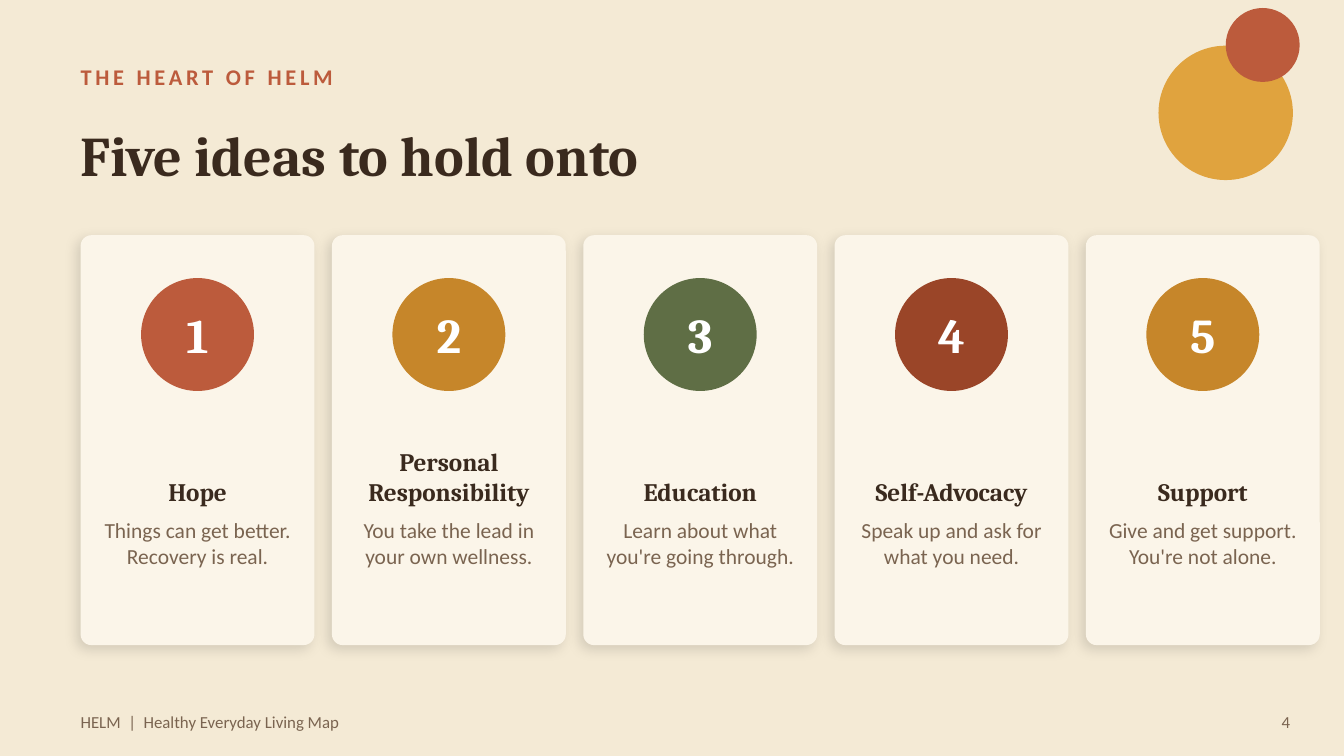
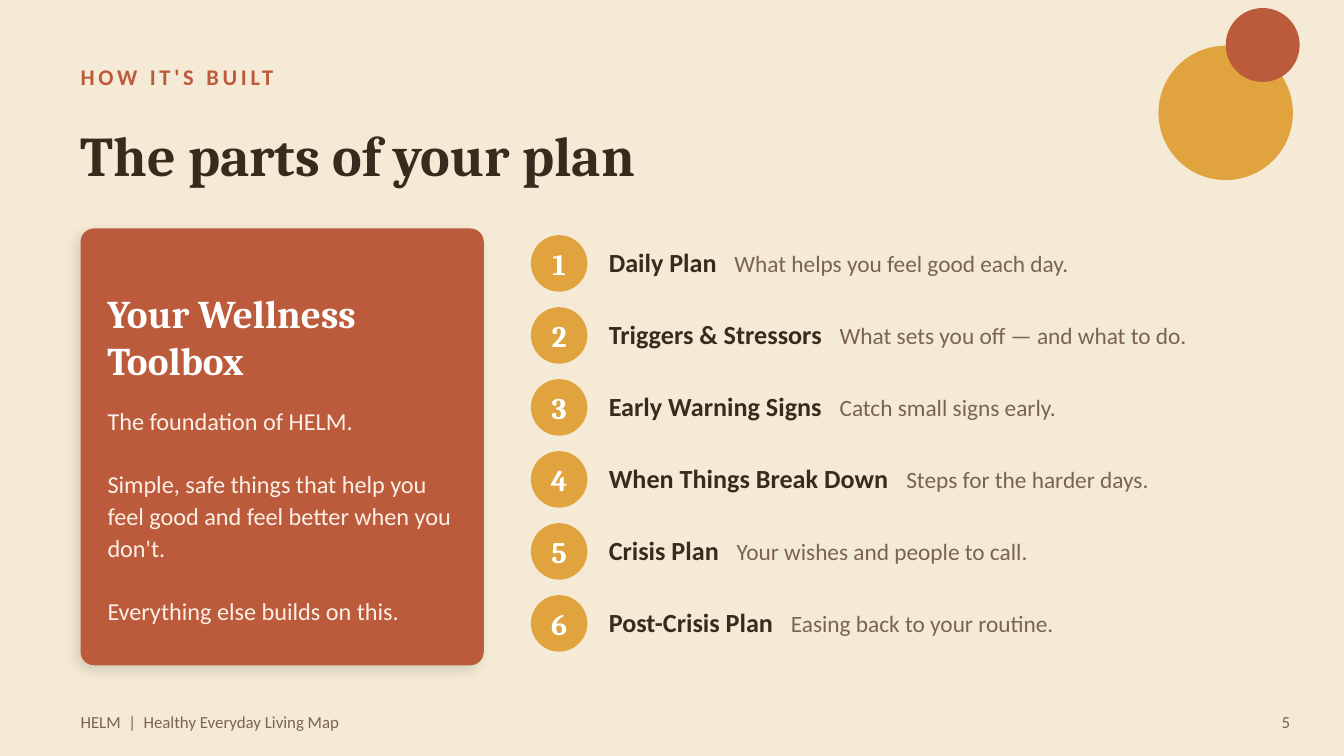
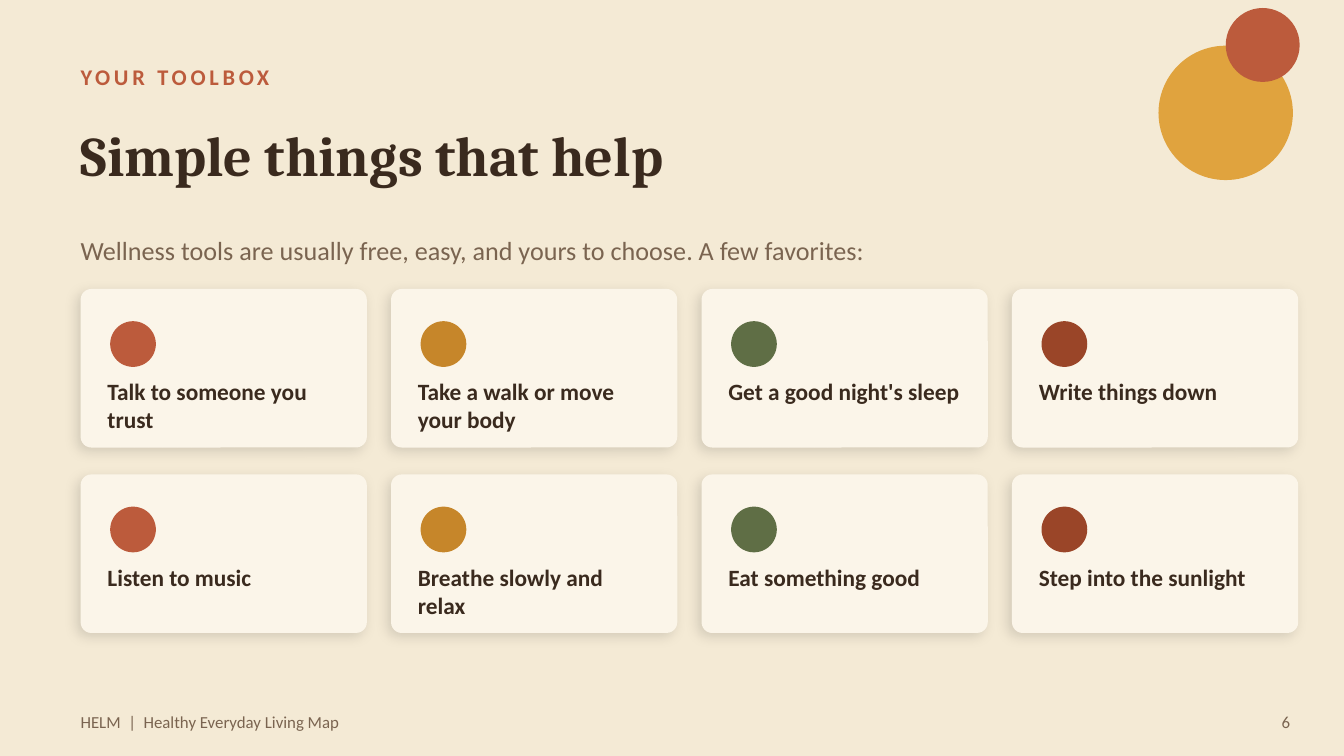
from dataclasses import dataclass
from typing import Any, NamedTuple, Optional

from lxml import etree
from pptx import Presentation
from pptx.dml.color import RGBColor
from pptx.enum.shapes import MSO_SHAPE
from pptx.enum.text import MSO_ANCHOR, PP_ALIGN
from pptx.oxml.ns import qn
from pptx.util import Pt

OVAL = MSO_SHAPE.OVAL
ROUNDED = MSO_SHAPE.ROUNDED_RECTANGLE
TOP, MIDDLE, BOTTOM = MSO_ANCHOR.TOP, MSO_ANCHOR.MIDDLE, MSO_ANCHOR.BOTTOM
LEFT, CENTER, RIGHT = PP_ALIGN.LEFT, PP_ALIGN.CENTER, PP_ALIGN.RIGHT

SAND = "F4EAD5"
CREAM = "FBF5E9"
RUST = "BC5B3C"
GOLD = "E0A33E"
AMBER = "C6862A"
OLIVE = "5F6E45"
BRICK = "9A4528"
INK = "3A2A1E"
TAUPE = "7A6450"
BLUSH = "FBEFE6"
WHITE = "FFFFFF"

SERIF = "Cambria"
SANS = "Calibri"
MARGIN = 43.2
CARD_RADIUS = 5.76
FOOTER = "HELM  |  Healthy Everyday Living Map"


class Box(NamedTuple):
    left: float
    top: float
    width: float
    height: float


@dataclass(frozen=True)
class Style:
    name: str
    size: float
    color: str
    bold: bool = False
    tracking: float = 0


class Span(NamedTuple):
    text: str
    style: Style


class Idea(NamedTuple):
    color: str
    heading: list[str]
    detail: str


class Part(NamedTuple):
    heading: str
    detail: str


EYEBROW = Style(SANS, 12, RUST, True, 2)
TITLE = Style(SERIF, 30, INK, True)
SMALL = Style(SANS, 9, TAUPE)
IDEA_NUMBER = Style(SERIF, 26, WHITE, True)
IDEA_HEADING = Style(SERIF, 13.5, INK, True)
IDEA_DETAIL = Style(SANS, 11.5, TAUPE)
PANEL_HEADING = Style(SERIF, 21, WHITE, True)
PANEL_BODY = Style(SANS, 13, BLUSH)
PART_NUMBER = Style(SERIF, 16, WHITE, True)
PART_HEADING = Style(SANS, 14, INK, True)
PART_GAP = Style(SANS, 14, INK, True, 6.3)
PART_DETAIL = Style(SANS, 12.5, TAUPE)
INTRO = Style(SANS, 14, TAUPE)
TOOL = Style(SANS, 12.5, INK, True)

IDEAS = [
    Idea(RUST, ["Hope"], "Things can get better. Recovery is real."),
    Idea(AMBER, ["Personal", "Responsibility"], "You take the lead in your own wellness."),
    Idea(OLIVE, ["Education"], "Learn about what you're going through."),
    Idea(BRICK, ["Self-Advocacy"], "Speak up and ask for what you need."),
    Idea(AMBER, ["Support"], "Give and get support. You're not alone."),
]
PANEL_LINES = [
    "The foundation of HELM.",
    "Simple, safe things that help you feel good and feel better when you don't.",
    "Everything else builds on this.",
]
PARTS = [
    Part("Daily Plan", "What helps you feel good each day."),
    Part("Triggers & Stressors", "What sets you off — and what to do."),
    Part("Early Warning Signs", "Catch small signs early."),
    Part("When Things Break Down", "Steps for the harder days."),
    Part("Crisis Plan", "Your wishes and people to call."),
    Part("Post-Crisis Plan", "Easing back to your routine."),
]
TOOLS = [
    "Talk to someone you trust",
    "Take a walk or move your body",
    "Get a good night's sleep",
    "Write things down",
    "Listen to music",
    "Breathe slowly and relax",
    "Eat something good",
    "Step into the sunlight",
]
TOOL_COLORS = [RUST, AMBER, OLIVE, BRICK]


def paint(fill: Any, color: str) -> None:
    fill.solid()
    fill.fore_color.rgb = RGBColor.from_string(color)


def place(box: Box) -> list[int]:
    return [Pt(length) for length in box]


def assign(target: Any, values: dict[str, Any]) -> None:
    for name, value in values.items():
        setattr(target, name, value)


def add_span(para: Any, span: Span) -> None:
    run = para.add_run()
    run.text = span.text
    style = span.style
    assign(run.font, {"name": style.name, "size": Pt(style.size), "bold": style.bold})
    run.font.color.rgb = RGBColor.from_string(style.color)
    if style.tracking:
        run.font._element.set("spc", str(round(style.tracking * 100)))


def write(shape: Any, lines: list[list[Span]], align: Any = LEFT, anchor: Any = MIDDLE,
          leading: Optional[float] = None, gap: float = 0) -> None:
    frame = shape.text_frame
    assign(frame, {"word_wrap": True, "vertical_anchor": anchor, "margin_left": 0,
                   "margin_top": 0, "margin_right": 0, "margin_bottom": 0})
    for index, spans in enumerate(lines):
        para = frame.add_paragraph() if index else frame.paragraphs[0]
        para.alignment = align
        if leading:
            para.line_spacing = Pt(leading)
        if index and gap:
            para.space_before = Pt(gap)
        for span in spans:
            add_span(para, span)


def add_text(page: Any, box: Box, texts: list[str], style: Style, **layout: Any) -> None:
    lines = [[Span(text, style)] for text in texts]
    write(page.shapes.add_textbox(*place(box)), lines, **layout)


def add_shape(page: Any, kind: Any, box: Box, color: str) -> Any:
    shape = page.shapes.add_shape(kind, *place(box))
    shape.shadow.inherit = False
    paint(shape.fill, color)
    shape.line.fill.background()
    return shape


def add_circle(page: Any, left: float, top: float, size: float, color: str) -> Any:
    return add_shape(page, OVAL, Box(left, top, size, size), color)


def add_card(page: Any, box: Box, color: str, radius: float) -> None:
    card = add_shape(page, ROUNDED, box, color)
    card.adjustments[0] = radius / min(box.width, box.height)
    effects = card._element.spPr.find(qn("a:effectLst"))
    shadow = etree.SubElement(effects, qn("a:outerShdw"), {
        "blurRad": str(Pt(7)), "dist": str(Pt(3)), "dir": str(135 * 60000),
        "algn": "bl", "rotWithShape": "0"})
    tint = etree.SubElement(shadow, qn("a:srgbClr"), {"val": "000000"})
    etree.SubElement(tint, qn("a:alpha"), {"val": "12000"})


def add_page(deck: Any, number: int, eyebrow: str, title: str) -> Any:
    page = deck.slides.add_slide(deck.slide_layouts[6])
    paint(page.background.fill, SAND)
    add_circle(page, 620.64, 24.5, 72, GOLD)
    add_circle(page, 656.64, 4.3, 39.6, RUST)
    add_text(page, Box(MARGIN, 30.24, 576, 21.6), [eyebrow], EYEBROW)
    add_text(page, Box(MARGIN, 51.84, 597.6, 61.2), [title], TITLE)
    add_text(page, Box(MARGIN, 376, 432, 21.6), [FOOTER], SMALL)
    add_text(page, Box(655.2, 376, 36, 21.6), [str(number)], SMALL, align=RIGHT)
    return page


def build_ideas(deck: Any) -> None:
    page = add_page(deck, 4, "THE HEART OF HELM", "Five ideas to hold onto")
    for index, idea in enumerate(IDEAS):
        left = MARGIN + index * 134.64
        add_card(page, Box(left, 126, 125.28, 219.6), CREAM, CARD_RADIUS)
        badge = add_circle(page, left + 32.4, 149, 60.48, idea.color)
        write(badge, [[Span(str(index + 1), IDEA_NUMBER)]], align=CENTER)
        add_text(page, Box(left + 5.76, 219.6, 113.76, 51.84), idea.heading,
                 IDEA_HEADING, align=CENTER, anchor=BOTTOM)
        add_text(page, Box(left + 9.36, 277.2, 106.56, 61.2), [idea.detail],
                 IDEA_DETAIL, align=CENTER, anchor=TOP)


def build_parts(deck: Any) -> None:
    page = add_page(deck, 5, "HOW IT'S BUILT", "The parts of your plan")
    add_card(page, Box(MARGIN, 122.4, 216, 234), RUST, 7.2)
    add_text(page, Box(57.6, 147.6, 187.2, 64.8), ["Your Wellness", "Toolbox"], PANEL_HEADING)
    add_text(page, Box(57.6, 216, 190.8, 133.2), PANEL_LINES, PANEL_BODY,
             anchor=TOP, leading=17, gap=17)
    for index, part in enumerate(PARTS):
        top = 122.4 + index * 38.57
        badge = add_circle(page, 284.4, top + 3.6, 30.24, GOLD)
        write(badge, [[Span(str(index + 1), PART_NUMBER)]], align=CENTER)
        label = page.shapes.add_textbox(*place(Box(326.16, top, 381.6, 36)))
        write(label, [[Span(part.heading, PART_HEADING), Span(" ", PART_GAP),
                       Span(part.detail, PART_DETAIL)]])


def build_tools(deck: Any) -> None:
    page = add_page(deck, 6, "YOUR TOOLBOX", "Simple things that help")
    intro = "Wellness tools are usually free, easy, and yours to choose. A few favorites:"
    add_text(page, Box(MARGIN, 119.5, 626.4, 28.8), [intro], INTRO)
    for index, tool in enumerate(TOOLS):
        row, column = divmod(index, len(TOOL_COLORS))
        left = MARGIN + column * 166.32
        top = 154.8 + row * 99.36
        add_card(page, Box(left, top, 153.36, 84.96), CREAM, CARD_RADIUS)
        add_circle(page, left + 15.84, top + 17.28, 24.48, TOOL_COLORS[column])
        add_text(page, Box(left + 14.4, top + 47.52, 124.56, 30.24), [tool], TOOL, anchor=TOP)


def main() -> None:
    deck = Presentation()
    assign(deck, {"slide_width": Pt(720), "slide_height": Pt(405)})
    build_ideas(deck)
    build_parts(deck)
    build_tools(deck)
    deck.save("out.pptx")


if __name__ == "__main__":
    main()
